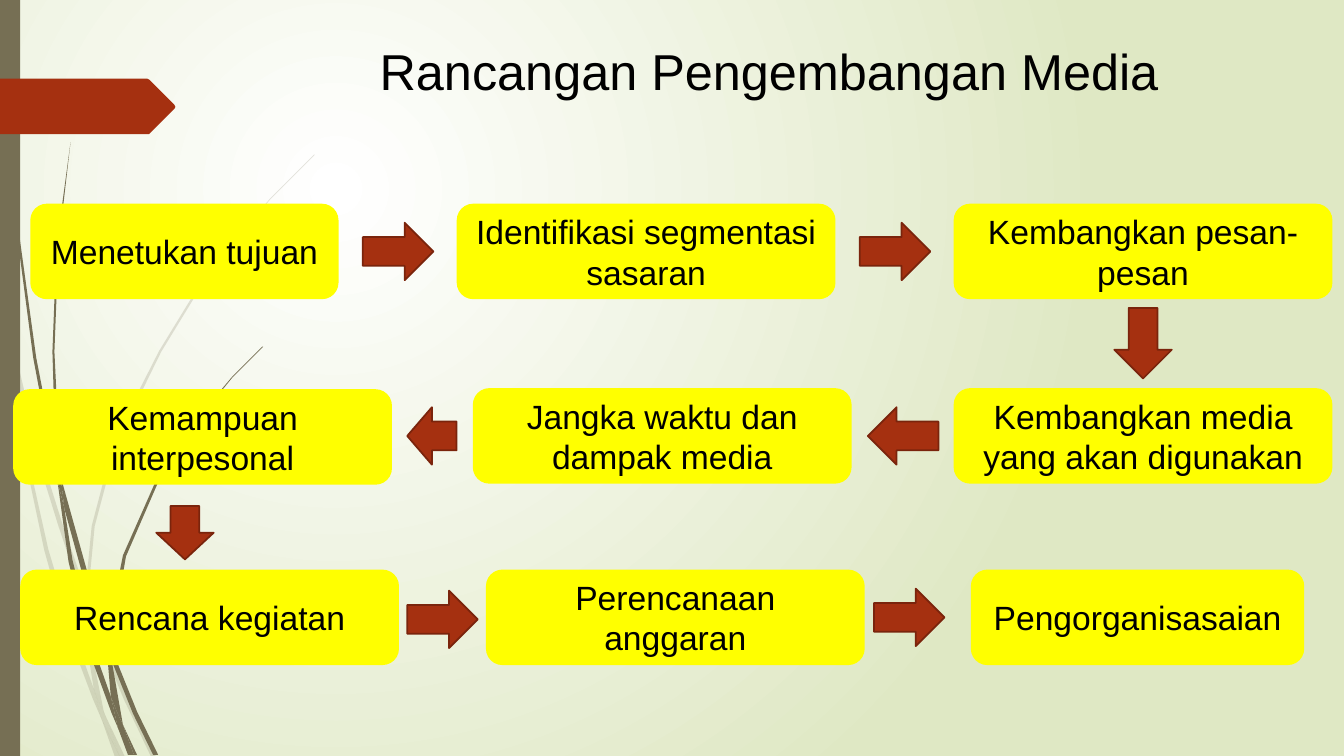
from lxml import etree
from pptx import Presentation
from pptx.dml.color import RGBColor
from pptx.enum.shapes import MSO_SHAPE as Preset
from pptx.enum.text import MSO_ANCHOR as Anchor, MSO_AUTO_SIZE as AutoSize, PP_ALIGN as Align
from pptx.oxml.ns import qn
from pptx.util import Inches, Pt

COLOURS = {
    "black": "000000", "yellow": "FFFF00", "rust": "A53010", "rust_edge": "7A240C",
    "olive": "766F54", "white": "FFFFFF", "sage": "DFE8C4",
}
BOX_HEIGHT, ARROW_HEIGHT = 0.93, 0.57
RIGHT, DOWN, LEFT = 0, 90, 180

STEPS = [
    ("Menetukan tujuan", 0.31, 2.03, 3.04),
    ("Identifikasi segmentasi sasaran", 4.54, 2.03, 3.74),
    ("Kembangkan pesan-pesan", 9.47, 2.03, 3.74),
    ("Kembangkan media yang akan digunakan", 9.47, 3.86, 3.74),
    ("Jangka waktu dan dampak media", 4.7, 3.86, 3.74),
    ("Kemampuan interpesonal", 0.14, 3.87, 3.74),
    ("Rencana kegiatan", 0.21, 5.66, 3.74),
    ("Perencanaan anggaran", 4.83, 5.66, 3.74),
    ("Pengorganisasaian", 9.64, 5.66, 3.29),
]
ARROWS = [
    (3.6, 2.21, 0.7, RIGHT), (8.53, 2.21, 0.7, RIGHT), (10.99, 3.12, 0.7, DOWN),
    (8.61, 4.04, 0.7, LEFT), (4.04, 4.04, 0.49, LEFT), (1.57, 5, 0.53, DOWN),
    (4.04, 5.86, 0.7, RIGHT), (8.67, 5.84, 0.7, RIGHT),
]
PALE_BLADES = [
    [(0.11, 3.5), (0.09, 3.22), (0, 2.82), (0, 2.99), (0.1, 3.44)],
    [(0.58, 5.22), (0.84, 5.99), (0.85, 5.86), (0.62, 5.2), (0.35, 4.34), (0.14, 3.45),
     (0.17, 3.76), (0.36, 4.51)],
    [(0.92, 6.07), (0.88, 5.96), (0.88, 6.1), (1.23, 6.94), (1.5, 7.51), (1.55, 7.51),
     (1.27, 6.92)],
    [(1.19, 7.51), (1.24, 7.51), (1.05, 7.11)],
    [(0.93, 6.83), (0.7, 6.19), (0.48, 5.45), (0.31, 4.69), (0.17, 3.76), (0.11, 3.5),
     (0.28, 4.7), (0.44, 5.46), (0.65, 6.21), (0.92, 6.93), (1.01, 7.14), (0.99, 7.07)],
    [(0.84, 5.99), (0.87, 6.46), (0.93, 6.83), (0.96, 6.92), (1.05, 7.11), (1.03, 7.06),
     (0.91, 6.46), (0.88, 6.1)],
    [(0.88, 5.84), (0.94, 5.22), (1.1, 4.62), (1.33, 4.04), (1.6, 3.49), (1.93, 2.95),
     (2.29, 2.45), (2.68, 1.98), (3.12, 1.54), (3.12, 1.53), (2.68, 1.97), (2.28, 2.44),
     (1.91, 2.94), (1.58, 3.48), (1.3, 4.03), (1.07, 4.61), (0.91, 5.22), (0.85, 5.84),
     (0.88, 5.96)],
    [(1.01, 7.14), (1.14, 7.51), (1.19, 7.51)],
    [(0.96, 6.92), (0.93, 6.83), (0.99, 7.07), (1.01, 7.14), (1.19, 7.51), (1.05, 7.11)],
]
DARK_BLADES = [
    [(0.07, 1.1), (0.17, 2.33), (0.33, 3.55), (0.56, 4.77), (0.57, 4.81), (0.55, 4.53),
     (0.36, 3.55), (0.19, 2.32), (0.08, 1.09), (0.04, 0), (0.03, 0)],
    [(0.88, 5.92), (1.06, 6.45), (1.06, 6.31), (0.93, 5.9), (0.6, 4.72), (0.64, 5.05)],
    [(1.13, 6.49), (1.1, 6.41), (1.11, 6.56), (1.32, 7.08), (1.52, 7.49), (1.57, 7.49),
     (1.36, 7.06)],
    [(1.1, 6.91), (0.98, 6.57), (0.72, 5.56), (0.64, 5.05), (0.57, 4.77), (0.68, 5.57),
     (0.93, 6.59), (1.11, 7.08), (1.17, 7.22)],
    [(0.6, 4.72), (0.54, 3.49), (0.58, 2.45), (0.7, 1.41), (0.56, 2.45), (0.52, 3.49),
     (0.55, 4.49)],
    [(1.33, 7.49), (1.36, 7.49), (1.22, 7.19)],
    [(0.57, 4.77), (0.64, 5.05), (0.6, 4.72), (0.55, 4.49), (0.55, 4.53)],
    [(1.11, 6.33), (1.25, 5.52), (1.58, 4.76), (2.05, 4.06), (2.31, 3.74), (2.61, 3.44),
     (2.6, 3.44), (2.31, 3.73), (2.04, 4.05), (1.56, 4.74), (1.22, 5.51), (1.06, 6.31),
     (1.1, 6.41)],
    [(1.17, 7.22), (1.27, 7.49), (1.31, 7.49)],
    [(1.06, 6.45), (1.1, 6.91), (1.16, 7.06), (1.22, 7.19), (1.11, 6.56)],
    [(1.16, 7.06), (1.1, 6.91), (1.17, 7.22), (1.3, 7.49), (1.33, 7.49), (1.22, 7.19)],
]


def rgb(name):
    """Return the named colour."""
    return RGBColor.from_string(COLOURS[name])


def paint(shape, fill, line=None, opacity=100):
    """Give a shape a flat fill, an optional outline and no shadow."""
    shape.shadow.inherit = False
    shape.fill.solid()
    shape.fill.fore_color.rgb = rgb(fill)
    if line:
        shape.line.color.rgb = rgb(line)
        shape.line.width = Pt(1.25)
    else:
        shape.line.fill.background()
    if opacity < 100:
        colour = shape.fill._xPr.find(".//" + qn("a:srgbClr"))
        etree.SubElement(colour, qn("a:alpha"), val=str(opacity * 1000))


def write(frame, text, size=24, colour="black", font="Arial"):
    """Write one centred paragraph into a text frame."""
    frame.word_wrap = True
    frame.auto_size = AutoSize.NONE
    frame.vertical_anchor = Anchor.MIDDLE
    para = frame.paragraphs[0]
    para.alignment = Align.CENTER
    span = para.add_run()
    span.text = text
    span.font.size = Pt(size)
    span.font.name = font
    span.font.color.rgb = rgb(colour)


def add_preset(page, preset, left, top, width, height, fill, line=None):
    """Add a painted preset shape."""
    shape = page.shapes.add_shape(
        preset, Inches(left), Inches(top), Inches(width), Inches(height))
    paint(shape, fill, line)
    return shape


def add_outline(page, points, fill, opacity=100):
    """Add a painted closed outline through the points."""
    corners = [(Inches(x), Inches(y)) for x, y in points]
    builder = page.shapes.build_freeform(*corners[0])
    builder.add_line_segments(corners[1:], close=True)
    paint(builder.convert_to_shape(), fill, opacity=opacity)


def set_background(page):
    """Fill the page with a radial gradient from white to sage."""
    fill = page.background.fill
    fill.gradient()
    for stop, name, position in zip(fill.gradient_stops, ("white", "sage"), (0, 1)):
        stop.color.rgb = rgb(name)
        stop.position = position
    gradient = page.background._cSld.find(".//" + qn("a:gradFill"))
    gradient.remove(gradient.find(qn("a:lin")))
    radial = etree.SubElement(gradient, qn("a:path"), path="circle")
    etree.SubElement(radial, qn("a:fillToRect"), l="50000", t="50000", r="100000", b="100000")


def add_decoration(page):
    """Draw the grass, the side bar and the tag."""
    for blades, opacity in ((PALE_BLADES, 20), (DARK_BLADES, 100)):
        for blade in blades:
            add_outline(page, blade, "olive", opacity)
    add_preset(page, Preset.RECTANGLE, 0, 0, 0.2, 7.5, "olive")
    tag = [(0, 0.78), (1.46, 0.78), (1.48, 0.79), (1.73, 1.04), (1.74, 1.06),
           (1.73, 1.08), (1.48, 1.33), (0, 1.33)]
    add_outline(page, tag, "rust")


def add_title(page, text):
    """Place and write the title."""
    title = page.shapes.title
    title.left, title.top = Inches(1.93), Inches(0.12)
    title.width, title.height = Inches(11.4), Inches(1.16)
    write(title.text_frame, text, size=36)


def add_step(page, text, left, top, width):
    """Add one step of the flow."""
    box = add_preset(page, Preset.ROUNDED_RECTANGLE, left, top, width, BOX_HEIGHT,
                     "yellow", "yellow")
    write(box.text_frame, text)


def add_arrow(page, left, top, width, rotation):
    """Add a block arrow turned to its direction."""
    arrow = add_preset(page, Preset.RIGHT_ARROW, left, top, width, ARROW_HEIGHT,
                       "rust", "rust_edge")
    arrow.rotation = rotation


def main():
    """Build the deck and save it."""
    deck = Presentation()
    deck.slide_width, deck.slide_height = Inches(40 / 3), Inches(7.5)
    page = deck.slides.add_slide(deck.slide_layouts[5])
    set_background(page)
    add_decoration(page)
    add_title(page, "Rancangan Pengembangan Media")
    for step in STEPS:
        add_step(page, *step)
    for arrow in ARROWS:
        add_arrow(page, *arrow)
    deck.save("out.pptx")


if __name__ == "__main__":
    main()
